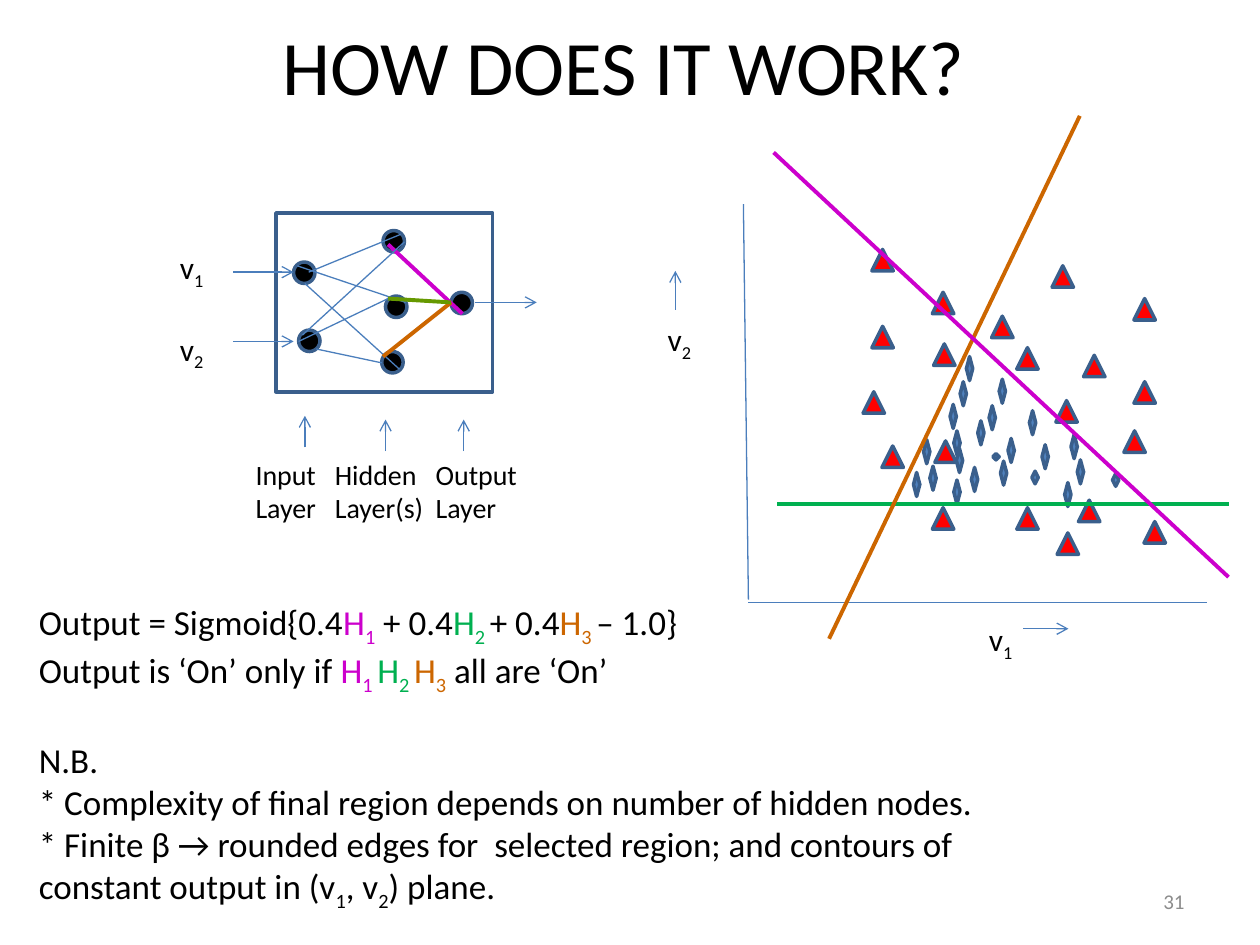
from typing import NamedTuple

from lxml import etree
from pptx import Presentation
from pptx import util as u
from pptx.dml.color import RGBColor
from pptx.enum import shapes, text
from pptx.oxml.ns import qn

FONT = "Calibri"
BLACK, RED, GRAY = "000000", "FF0000", "8C8C8C"
OUTLINE, THIN_BLUE, BLUE = "3A5F8C", "4B7EBC", "4F81BD"
MAGENTA, GREEN, ORANGE, OLIVE = "CC00CC", "00B050", "CC6600", "669900"
MARKER_SIZE = 0.17
DIAMOND_WIDTH = 0.05


class Line(NamedTuple):
    x1: float
    y1: float
    x2: float
    y2: float
    color: str = THIN_BLUE
    width: float = 0.75
    arrow: bool = False


class Run(NamedTuple):
    text: str
    color: str = BLACK
    subscript: bool = False


class Paragraph(NamedTuple):
    runs: list[Run]
    space_before: float = 0


class Diamond(NamedTuple):
    left: float
    top: float
    height: float = 0.19


def rgb(color: str) -> RGBColor:
    return RGBColor.from_string(color)


def variable(name: str, index: str, color: str = BLACK) -> list[Run]:
    return [Run(name, color), Run(index, color, True)]


def arrow(x1: float, y1: float, x2: float, y2: float) -> Line:
    return Line(x1, y1, x2, y2, arrow=True)


def add_line(slide, line: Line) -> None:
    connector = slide.shapes.add_connector(
        shapes.MSO_CONNECTOR.STRAIGHT,
        *(u.Inches(value) for value in (line.x1, line.y1, line.x2, line.y2)))
    connector.line.color.rgb = rgb(line.color)
    connector.line.width = u.Pt(line.width)
    if line.arrow:
        etree.SubElement(connector.line._get_or_add_ln(), qn("a:tailEnd"), type="arrow")
    etree.SubElement(connector._element.spPr, qn("a:effectLst"))


def add_outlined(slide, kind, left: float, top: float, width: float,
                 height: float, fill: str | None = None) -> None:
    shape = slide.shapes.add_shape(
        kind, u.Inches(left), u.Inches(top), u.Inches(width), u.Inches(height))
    shape.shadow.inherit = False
    if fill:
        shape.fill.solid()
        shape.fill.fore_color.rgb = rgb(fill)
    else:
        shape.fill.background()
    shape.line.color.rgb = rgb(OUTLINE)
    shape.line.width = u.Pt(2)


def add_text(slide, left: float, top: float, width: float, height: float,
             paragraphs: list[Paragraph], size: float):
    frame = slide.shapes.add_textbox(
        u.Inches(left), u.Inches(top), u.Inches(width), u.Inches(height)).text_frame
    frame.word_wrap = True
    for number, content in enumerate(paragraphs):
        paragraph = frame.add_paragraph() if number else frame.paragraphs[0]
        paragraph.font.name = FONT
        paragraph.font.size = u.Pt(size)
        paragraph.space_before = u.Pt(content.space_before)
        for part in content.runs:
            run = paragraph.add_run()
            run.text = part.text
            run.font.color.rgb = rgb(part.color)
            if part.subscript:
                run._r.get_or_add_rPr().set("baseline", "-25000")
    return frame


def set_tabs(paragraph, positions: list[float]) -> None:
    tabs = etree.SubElement(paragraph._p.get_or_add_pPr(), qn("a:tabLst"))
    for position in positions:
        etree.SubElement(tabs, qn("a:tab"), pos=str(u.Inches(position)), algn="l")
    defaults = paragraph._p.pPr.find(qn("a:defRPr"))
    if defaults is not None:
        defaults.addprevious(tabs)


NODES = [(2.33, 2.08), (2.37, 2.62), (3.04, 1.83), (3.06, 2.35), (3.03, 2.79), (3.58, 2.32)]
NETWORK_LINES = [
    *(arrow(x, y, x, y - 0.25) for x, y in [(3.68, 3.58), (3.06, 3.58), (2.42, 3.55)]),
    arrow(3.77, 2.4, 4.26, 2.4),
    arrow(1.85, 2.16, 2.33, 2.16),
    arrow(1.85, 2.71, 2.33, 2.71),
    Line(2.45, 2.16, 3.18, 1.86),
    Line(2.42, 2.25, 3.17, 2.93),
    Line(2.36, 2.11, 3.22, 2.4),
    Line(3.08, 1.94, 3.67, 2.49, MAGENTA, 2.25),
    Line(3.04, 2.83, 3.58, 2.4, ORANGE, 2.25),
    Line(2.4, 2.66, 3.21, 1.92),
    Line(2.51, 2.77, 3.03, 2.88),
    Line(3.08, 2.37, 3.58, 2.4, OLIVE, 2.25),
    Line(2.37, 2.71, 3.08, 2.37),
]
AXES = [Line(5.9, 1.62, 5.94, 4.76), Line(5.94, 4.78, 9.58, 4.78)]
AXIS_ARROWS = [arrow(8.12, 4.99, 8.48, 4.99), arrow(5.36, 2.46, 5.36, 2.15)]
BOUNDARIES = [
    Line(6.17, 4, 9.75, 4, GREEN, 2.25),
    Line(8.57, 0.92, 6.58, 5.07, ORANGE, 2.25),
    Line(6.14, 1.21, 9.75, 4.58, MAGENTA, 2.25),
]
DIAMONDS = [
    Diamond(7.67, 2.83), Diamond(8.83, 3.76, 0.1), Diamond(7.62, 3.03),
    Diamond(7.88, 3.6, 0.05), Diamond(7.57, 3.42), Diamond(7.33, 3.49),
    Diamond(7.57, 3.81), Diamond(7.93, 3.01), Diamond(8.17, 3.26),
    Diamond(8.5, 3.45), Diamond(8.19, 3.74, 0.1), Diamond(7.71, 3.71),
    Diamond(8, 3.48), Diamond(8.55, 3.65), Diamond(7.94, 3.66),
    Diamond(7.85, 3.22), Diamond(7.38, 3.7), Diamond(8.45, 3.83),
    Diamond(8.27, 3.53), Diamond(7.54, 3.21), Diamond(7.76, 3.34),
    Diamond(7.25, 3.75), Diamond(7.59, 3.56),
]
TRIANGLES = [
    (6.92, 1.98), (9, 2.37), (6.85, 3.11), (8.07, 4.03), (7, 3.54),
    (8.38, 3.18), (7.4, 4.03), (8.92, 3.42), (9.08, 4.14), (7.87, 2.51),
    (8.6, 2.82), (7.41, 2.73), (8.07, 2.76), (7.42, 3.5), (9, 3.03),
    (8.35, 2.11), (8.39, 4.23), (7.4, 2.32), (8.56, 3.97), (6.92, 2.59),
]
EXPLANATION = [
    Paragraph([Run("Output = Sigmoid{0.4"), *variable("H", "1", MAGENTA),
               Run(" + 0.4"), *variable("H", "2 ", GREEN),
               Run("+ 0.4"), *variable("H", "3 ", ORANGE), Run("– 1.0}")]),
    Paragraph([Run("Output is ‘On’ only if "), *variable("H", "1 ", MAGENTA),
               *variable("H", "2 ", GREEN), *variable("H", "3", ORANGE),
               Run(" all are ‘On’")]),
    Paragraph([Run("N.B.")], space_before=24),
    Paragraph([Run("* Complexity of final region depends on number of hidden nodes.")]),
    Paragraph([Run("* Finite β → rounded edges for  selected region; and contours of "
                   "constant output in (v"), Run("1", subscript=True),
               Run(", v"), Run("2", subscript=True), Run(") plane.")]),
]


def add_title(slide, title: str) -> None:
    shape = slide.shapes.title
    shape.left, shape.top = u.Inches(0.45), u.Inches(0)
    shape.width, shape.height = u.Inches(9), u.Inches(1.03)
    shape.text_frame.text = title
    paragraph = shape.text_frame.paragraphs[0]
    paragraph.alignment = text.PP_ALIGN.CENTER
    paragraph.font.name = FONT
    paragraph.font.size = u.Pt(44)
    paragraph.font.color.rgb = rgb(BLACK)


def add_network(slide) -> None:
    add_outlined(slide, shapes.MSO_SHAPE.RECTANGLE, 2.19, 1.69, 1.72, 1.42)
    for left, top in NODES:
        add_outlined(slide, shapes.MSO_SHAPE.OVAL, left, top, MARKER_SIZE, MARKER_SIZE, BLACK)
    for line in NETWORK_LINES:
        add_line(slide, line)
    labels = add_text(slide, 1.93, 3.58, 3.5, 0.64, [
        Paragraph([Run("Input\tHidden\tOutput")]),
        Paragraph([Run("Layer\tLayer(s)\tLayer")])], 16)
    for paragraph in labels.paragraphs:
        set_tabs(paragraph, [0.63, 1.43])
    add_text(slide, 1.33, 1.92, 0.51, 1.01, [
        Paragraph(variable("v", "1")), Paragraph(variable("v", "2"), space_before=22)], 18)


def add_scatter(slide) -> None:
    for line in AXES:
        add_line(slide, line)
    for left, top, height in DIAMONDS:
        add_outlined(slide, shapes.MSO_SHAPE.DIAMOND, left, top, DIAMOND_WIDTH, height, BLUE)
    for left, top in TRIANGLES:
        add_outlined(slide, shapes.MSO_SHAPE.FLOWCHART_EXTRACT, left, top,
                     MARKER_SIZE, MARKER_SIZE, RED)
    add_text(slide, 5.2, 2.49, 0.58, 0.4, [Paragraph(variable("v", "2"))], 18)
    add_text(slide, 7.75, 4.87, 0.54, 0.4, [Paragraph(variable("v", "1"))], 18)
    for line in AXIS_ARROWS + BOUNDARIES:
        add_line(slide, line)


def main() -> None:
    presentation = Presentation()
    presentation.slide_width, presentation.slide_height = u.Inches(10), u.Inches(7.5)
    slide = presentation.slides.add_slide(presentation.slide_layouts[5])
    add_title(slide, "HOW DOES IT WORK?")
    number = add_text(slide, 7.17, 6.95, 2.33, 0.4, [Paragraph([Run("31", GRAY)])], 12)
    number.vertical_anchor = text.MSO_ANCHOR.MIDDLE
    number.paragraphs[0].alignment = text.PP_ALIGN.RIGHT
    add_network(slide)
    add_text(slide, 0.21, 4.72, 8.06, 2.46, EXPLANATION, 20)
    add_scatter(slide)
    presentation.save("out.pptx")


if __name__ == "__main__":
    main()
